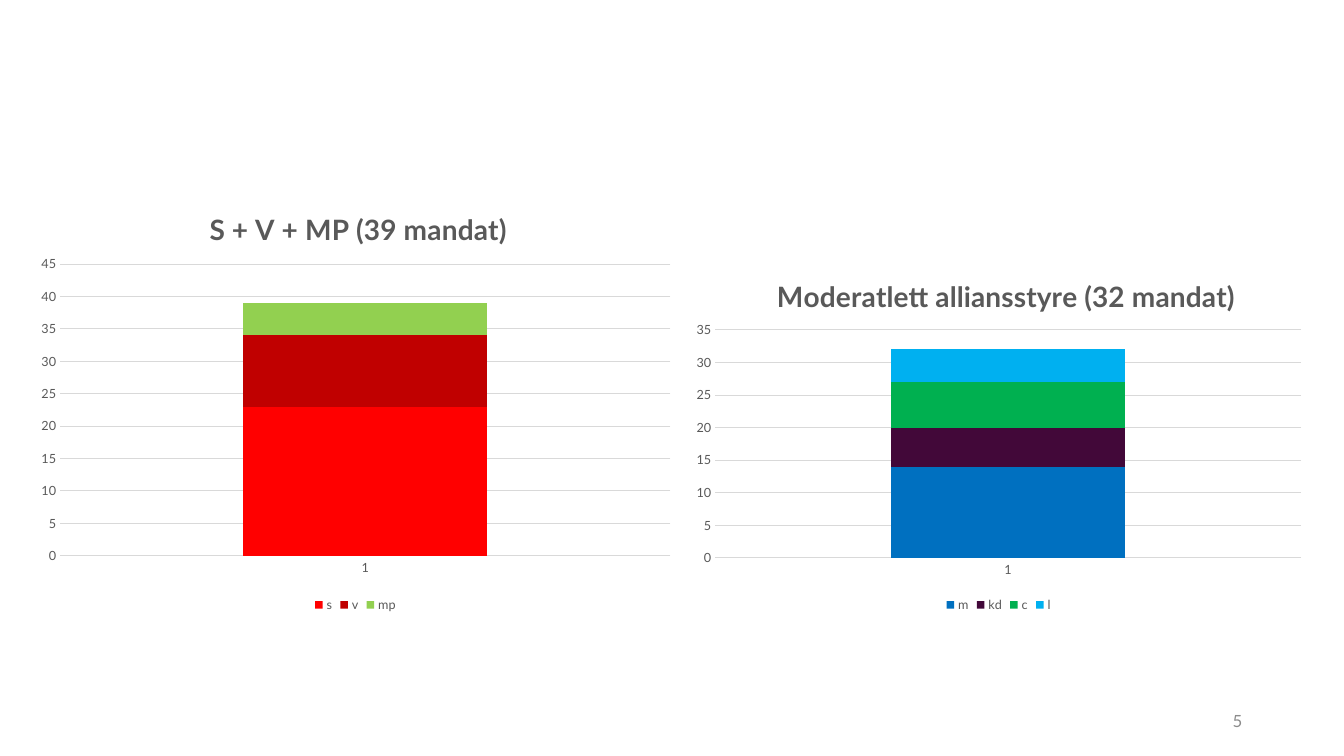
import pptx
import pptx.chart.data
import pptx.dml.color
import pptx.enum.chart
import pptx.enum.text
import pptx.oxml
import pptx.oxml.ns
import pptx.util
from pptx.util import Inches

RGBColor = pptx.dml.color.RGBColor
FONT = "Lato"
BLACK = RGBColor(0x00, 0x00, 0x00)
TEXT_GREY = RGBColor(0x59, 0x59, 0x59)
NUMBER_GREY = RGBColor(0x8C, 0x8C, 0x8C)
LINE_GREY = RGBColor(0xD9, 0xD9, 0xD9)
RED = RGBColor(0xFF, 0x00, 0x00)
DARK_RED = RGBColor(0xC0, 0x00, 0x00)
LIGHT_GREEN = RGBColor(0x92, 0xD0, 0x50)
BLUE = RGBColor(0x00, 0x70, 0xC0)
PLUM = RGBColor(0x42, 0x08, 0x39)
GREEN = RGBColor(0x00, 0xB0, 0x50)
SKY = RGBColor(0x00, 0xB0, 0xF0)

LEFT_PARTIES = [("s", 23, RED), ("v", 11, DARK_RED), ("mp", 5, LIGHT_GREEN)]
ALLIANCE_PARTIES = [("m", 14, BLUE), ("kd", 6, PLUM), ("c", 7, GREEN), ("l", 5, SKY)]


def set_font(font, size, color, bold=False):
    font.name = FONT
    font.size = pptx.util.Pt(size)
    font.bold = bold
    font.color.rgb = color


def set_line(line):
    line.color.rgb = LINE_GREY
    line.width = pptx.util.Pt(0.75)


def set_layout(parent, after, **fractions):
    """Place a chart part by fractions of the chart area."""
    for old in parent.findall(pptx.oxml.ns.qn("c:layout")):
        parent.remove(old)
    modes = "".join(f'<c:{k}Mode val="edge"/>' for k in "xy")
    values = "".join(f'<c:{k} val="{v}"/>' for k, v in fractions.items())
    target = '<c:layoutTarget val="inner"/>' if "w" in fractions else ""
    layout = pptx.oxml.parse_xml(
        f'<c:layout {pptx.oxml.ns.nsdecls("c")}><c:manualLayout>'
        f"{target}{modes}{values}</c:manualLayout></c:layout>")
    if after is None:
        parent.insert(0, layout)
    else:
        after.addnext(layout)


def style_axis(axis):
    axis.major_tick_mark = pptx.enum.chart.XL_TICK_MARK.NONE
    axis.minor_tick_mark = pptx.enum.chart.XL_TICK_MARK.NONE
    set_font(axis.tick_labels.font, 9, TEXT_GREY)


def add_title(chart, text, x, y):
    chart.has_title = True
    title = chart.chart_title
    title.include_in_layout = False
    r = title.text_frame.paragraphs[0].add_run()
    r.text = text
    set_font(r.font, 20, TEXT_GREY, bold=True)
    set_layout(title._element, title._element.find(pptx.oxml.ns.qn("c:tx")), x=x, y=y)


def add_seat_chart(s, box, title, title_at, parties, top, plot_y, plot_h):
    data = pptx.chart.data.CategoryChartData()
    data.categories = ["1"]
    for name, seats, _ in parties:
        data.add_series(name, [seats])
    chart = s.shapes.add_chart(pptx.enum.chart.XL_CHART_TYPE.COLUMN_STACKED,
                               *map(Inches, box), data).chart
    set_font(chart.font, 10, BLACK)
    add_title(chart, title, *title_at)

    plot = chart.plots[0]
    plot.gap_width = 150
    plot.overlap = 100
    plot.vary_by_categories = False
    for series, (_, _, color) in zip(plot.series, parties):
        series.format.fill.solid()
        series.format.fill.fore_color.rgb = color

    style_axis(chart.category_axis)
    set_line(chart.category_axis.format.line)
    value_axis = chart.value_axis
    style_axis(value_axis)
    value_axis.format.line.fill.background()
    value_axis.minimum_scale = 0
    value_axis.maximum_scale = top
    value_axis.major_unit = 5
    set_line(value_axis.major_gridlines.format.line)

    chart.has_legend = True
    chart.legend.position = pptx.enum.chart.XL_LEGEND_POSITION.BOTTOM
    chart.legend.include_in_layout = False
    set_font(chart.legend.font, 9, TEXT_GREY)
    plot_area = chart._chartSpace.chart.plotArea
    set_layout(plot_area, None, x=0.05, y=plot_y, w=0.93, h=plot_h)


def add_slide_number(s, text):
    tf = s.shapes.add_textbox(Inches(9.42), Inches(6.95), Inches(3), Inches(0.4)).text_frame
    tf.word_wrap = True
    tf.vertical_anchor = pptx.enum.text.MSO_ANCHOR.MIDDLE
    p = tf.paragraphs[0]
    p.alignment = pptx.enum.text.PP_ALIGN.RIGHT
    r = p.add_run()
    r.text = text
    set_font(r.font, 12, NUMBER_GREY)


def main():
    prs = pptx.Presentation()
    prs.slide_width = Inches(13.33)
    prs.slide_height = Inches(7.5)
    s = prs.slides.add_slide(prs.slide_layouts[6])
    add_slide_number(s, "5")
    add_seat_chart(s, (0.27, 1.8, 6.51, 4.32), "S + V + MP (39 mandat)", (0.27, 0.05),
                   LEFT_PARTIES, top=45, plot_y=0.19, plot_h=0.67)
    add_seat_chart(s, (6.78, 2.47, 6.25, 3.65), "Moderatlett alliansstyre (32 mandat)",
                   (0.14, 0.06), ALLIANCE_PARTIES, top=35, plot_y=0.22, plot_h=0.62)
    prs.save("out.pptx")


if __name__ == "__main__":
    main()
